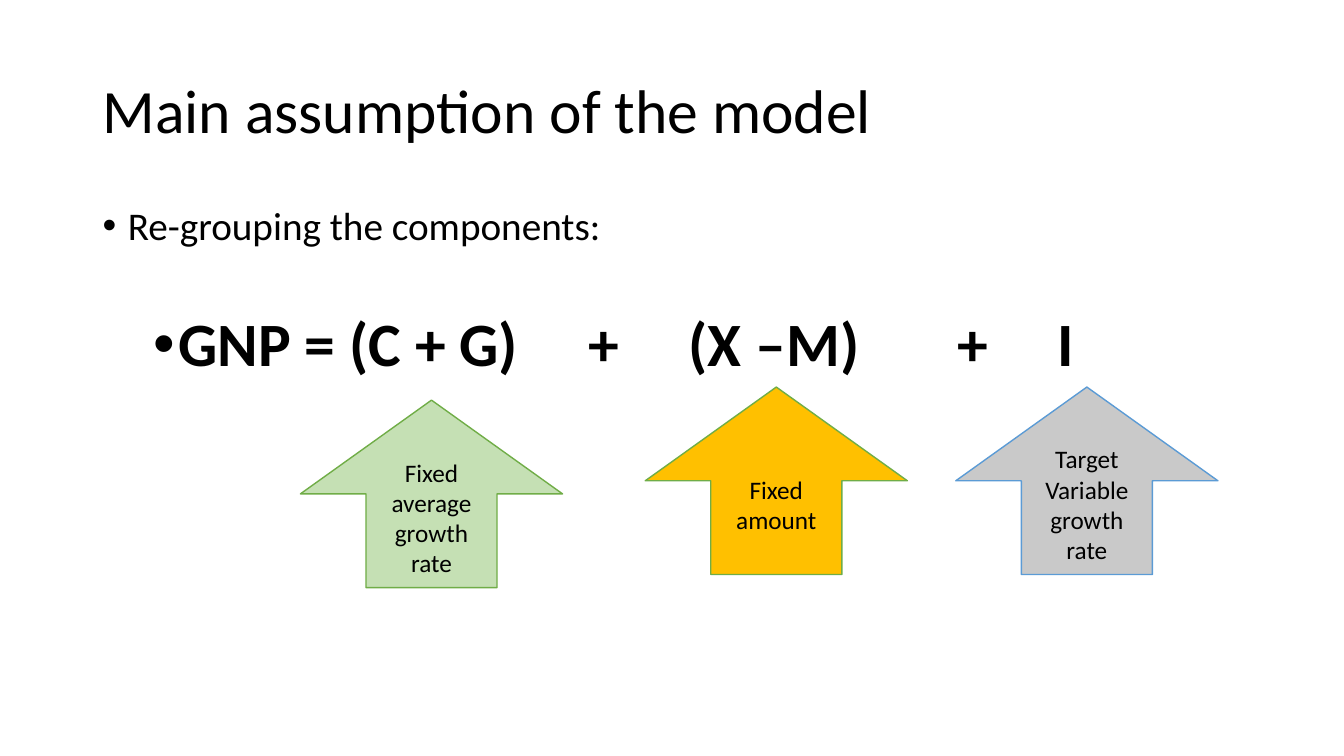
from dataclasses import dataclass

from lxml.etree import SubElement
from pptx import Presentation
from pptx.dml.color import RGBColor
from pptx.enum.shapes import MSO_SHAPE as Preset
from pptx.enum.text import MSO_ANCHOR as Anchor, PP_ALIGN as Align
from pptx.oxml.ns import qn
from pptx.slide import Slide
from pptx.text.text import TextFrame, _Paragraph as Paragraph, _Run as Run
from pptx.util import Inches, Pt

FONT = "Calibri"
BLACK = "000000"
ARROW_WIDTH, ARROW_HEIGHT = 2.6, 1.86
SPACE_ADVANCE = 0.226
FORMULA_SIZE = 44


@dataclass(frozen=True)
class Arrow:
    label: str
    left: float
    top: float
    fill: str
    outline: str


@dataclass(frozen=True)
class Term:
    label: str
    spaces_after: int = 0


ARROWS = (
    Arrow("Fixed average growth rate", 2.98, 3.97, "C5E0B4", "70AD47"),
    Arrow("Fixed amount", 6.4, 3.84, "FFC000", "70AD47"),
    Arrow("Target Variable growth rate", 9.48, 3.84, "C9C9C9", "5B9BD5"),
)
FORMULA = (
    Term("GNP = (C + G)", 5),
    Term("+", 5),
    Term("(X –M)", 7),
    Term("+", 5),
    Term("I"),
)


def color(value: str) -> RGBColor:
    return RGBColor.from_string(value)


def style_run(span: Run, size: float, bold: bool = False) -> None:
    span.font.name = FONT
    span.font.size = Pt(size)
    span.font.bold = bold
    span.font.color.rgb = color(BLACK)


def add_text_frame(page: Slide, top: float, height: float) -> TextFrame:
    box = page.shapes.add_textbox(Inches(0.92), Inches(top), Inches(11.5), Inches(height))
    box.text_frame.word_wrap = True
    return box.text_frame


def set_bullet(para: Paragraph, margin: float, space_before: float) -> None:
    para.line_spacing = 0.9
    para.space_before = Pt(space_before)
    properties = para._p.get_or_add_pPr()
    properties.set("marL", str(Inches(margin)))
    properties.set("indent", str(Inches(-0.25)))
    SubElement(properties, qn("a:buFont"), typeface="Arial")
    SubElement(properties, qn("a:buChar"), char="•")


def add_title(page: Slide) -> None:
    frame = add_text_frame(page, 0.4, 1.45)
    frame.vertical_anchor = Anchor.MIDDLE
    frame.text = "Main assumption of the model"
    para = frame.paragraphs[0]
    para.line_spacing = 0.9
    style_run(para.runs[0], 44)


def add_formula(para: Paragraph) -> None:
    for term in FORMULA:
        span = para.add_run()
        span.text = term.label
        style_run(span, FORMULA_SIZE, bold=True)
        if term.spaces_after:
            gap = para.add_run()
            gap.text = " "
            style_run(gap, FORMULA_SIZE, bold=True)
            extra = (term.spaces_after - 1) * SPACE_ADVANCE * FORMULA_SIZE
            gap.font._element.set("spc", str(round(extra * 100)))


def add_body(page: Slide) -> None:
    frame = add_text_frame(page, 2, 4.76)
    frame.text = "Re-grouping the components:"
    intro = frame.paragraphs[0]
    set_bullet(intro, 0.25, 10)
    style_run(intro.runs[0], 28)
    formula = frame.add_paragraph()
    formula.level = 1
    set_bullet(formula, 0.75, 46)
    add_formula(formula)


def add_arrow(page: Slide, arrow: Arrow) -> None:
    shape = page.shapes.add_shape(
        Preset.UP_ARROW, Inches(arrow.left), Inches(arrow.top),
        Inches(ARROW_WIDTH), Inches(ARROW_HEIGHT),
    )
    shape.shadow.inherit = False
    shape.fill.solid()
    shape.fill.fore_color.rgb = color(arrow.fill)
    shape.line.color.rgb = color(arrow.outline)
    shape.line.width = Pt(1)
    frame = shape.text_frame
    frame.word_wrap = True
    frame.vertical_anchor = Anchor.MIDDLE
    frame.text = arrow.label
    para = frame.paragraphs[0]
    para.alignment = Align.CENTER
    style_run(para.runs[0], 18)


def main() -> None:
    deck = Presentation()
    deck.slide_width, deck.slide_height = Inches(13.33), Inches(7.5)
    page = deck.slides.add_slide(deck.slide_layouts[6])
    add_title(page)
    add_body(page)
    for arrow in ARROWS:
        add_arrow(page, arrow)
    deck.save("out.pptx")


if __name__ == "__main__":
    main()
